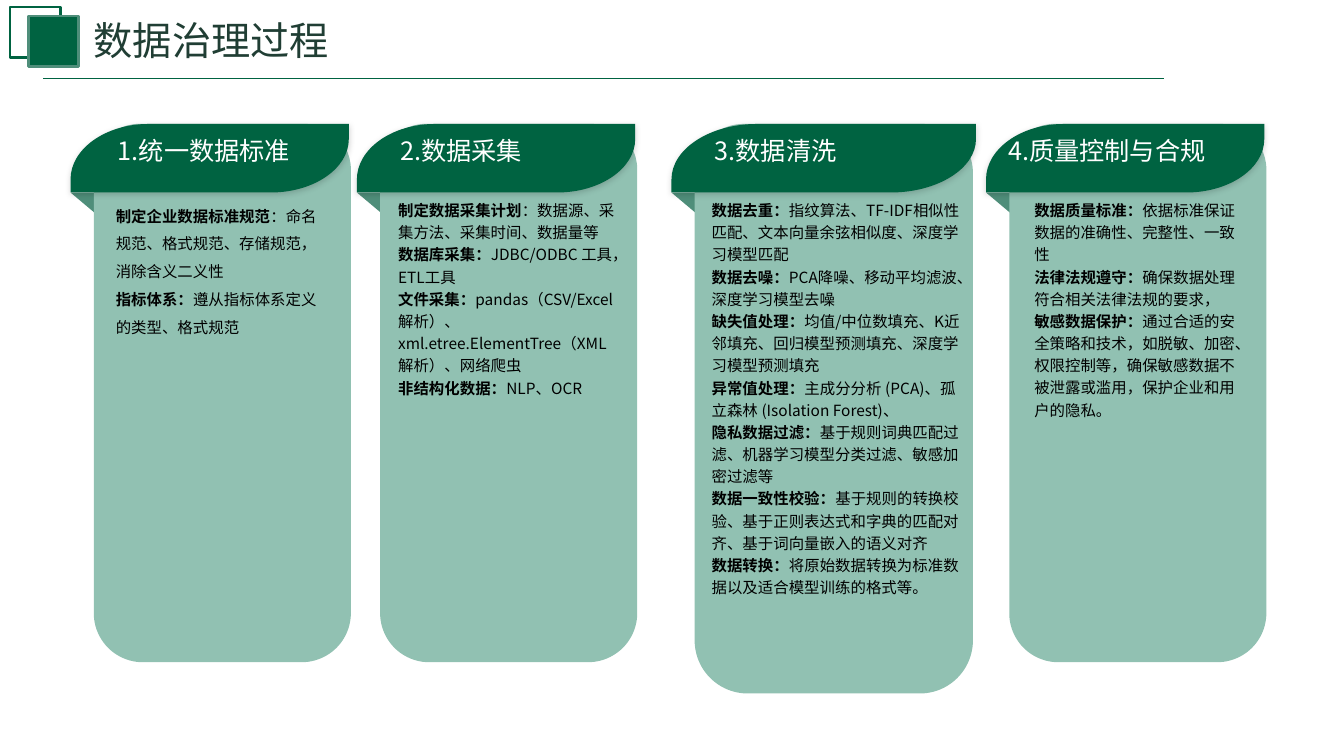
import copy
from lxml import etree
from pptx import Presentation
from pptx import util as u
from pptx.dml.color import RGBColor
from pptx.enum import shapes, text
from pptx.oxml import ns

GREEN = RGBColor(0x00, 0x63, 0x41)
MID_GREEN = RGBColor(0x4F, 0x8E, 0x7A)
PALE_GREEN = RGBColor(0x91, 0xC1, 0xB2)
DARK_START = RGBColor(0x16, 0x2B, 0x25)
DARK_MIDDLE = RGBColor(0x20, 0x3E, 0x34)
DARK_END = RGBColor(0x26, 0x49, 0x3E)
WHITE = RGBColor(0xFF, 0xFF, 0xFF)
BLACK = RGBColor(0x00, 0x00, 0x00)
FONT = "Noto Sans CJK SC"
TOP, FOLD = 1.23, 1.91

COLUMNS = [
    dict(x=0.7, w=2.76, panel=(2.55, 5.34), head="1.统一数据标准", head_x=1.07,
         body=(1.05, 2.33, 1.46), spacing=1.5, items=[
             ("制定企业数据标准规范", "：命名规范、格式规范、存储规范，消除含义二义性"),
             ("指标体系：", "遵从指标体系定义的类型、格式规范")]),
    dict(x=3.54, w=2.76, panel=(2.55, 5.34), head="2.数据采集", head_x=3.87,
         body=(3.85, 2.41, 2.08), spacing=1.2, items=[
             ("制定数据采集计划", "：数据源、采集方法、采集时间、数据量等"),
             ("数据库采集：", "JDBC/ODBC 工具，ETL工具"),
             ("文件采集：", "pandas（CSV/Excel解析）、xml.etree.ElementTree（XML解析）、网络爬虫"),
             ("非结构化数据：", "NLP、OCR")]),
    dict(x=6.66, w=3.02, panel=(2.76, 5.65), head="3.数据清洗", head_x=6.99,
         body=(6.96, 2.69, 4.81), spacing=1.2, items=[
             ("数据去重：", "指纹算法、TF-IDF相似性匹配、文本向量余弦相似度、深度学习模型匹配"),
             ("数据去噪：", "PCA降噪、移动平均滤波、深度学习模型去噪"),
             ("缺失值处理：", "均值/中位数填充、K近邻填充、回归模型预测填充、深度学习模型预测填充"),
             ("异常值处理：", "主成分分析 (PCA)、孤立森林 (Isolation Forest)、"),
             ("隐私数据过滤：", "基于规则词典匹配过滤、机器学习模型分类过滤、敏感加密过滤等"),
             ("数据一致性校验：", "基于规则的转换校验、基于正则表达式和字典的匹配对齐、基于词向量嵌入的语义对齐"),
             ("数据转换：", "将原始数据转换为标准数据以及适合模型训练的格式等。")]),
    dict(x=9.78, w=2.76, panel=(2.55, 5.34), head="4.质量控制与合规", head_x=9.9,
         body=(10.16, 2.24, 2.3), spacing=1.2, items=[
             ("数据质量标准：", "依据标准保证数据的准确性、完整性、一致性"),
             ("法律法规遵守：", "确保数据处理符合相关法律法规的要求，"),
             ("敏感数据保护：", "通过合适的安全策略和技术，如脱敏、加密、权限控制等，确保敏感数据不被泄露或滥用，保护企业和用户的隐私。")]),
]

prs = Presentation()
prs.slide_width, prs.slide_height = u.Inches(13.33), u.Inches(7.5)
s = prs.slides.add_slide(prs.slide_layouts[5])


def add_outline(points, color):
    pts = [(u.Inches(px), u.Inches(py)) for px, py in points]
    fb = s.shapes.build_freeform(*pts[0])
    fb.add_line_segments(pts[1:], close=True)
    sp = fb.convert_to_shape()
    sp.shadow.inherit = False
    sp.fill.solid()
    sp.fill.fore_color.rgb = color
    sp.line.fill.background()
    return sp


def add_text(box, paragraphs, size, color, spacing):
    tf = s.shapes.add_textbox(*map(u.Inches, box)).text_frame
    tf.word_wrap = True
    for i, runs in enumerate(paragraphs):
        p = tf.paragraphs[0] if i == 0 else tf.add_paragraph()
        p.line_spacing = spacing
        for words, bold in runs:
            r = p.add_run()
            r.text = words
            for name, value in dict(size=u.Pt(size), name=FONT, bold=bold).items():
                setattr(r.font, name, value)
            r.font.color.rgb = color
            etree.SubElement(r.font._element, ns.qn("a:ea"), typeface=FONT)


title = s.shapes.title
for name, value in dict(left=0.83, top=0.11, width=6.09, height=0.57).items():
    setattr(title, name, u.Inches(value))
tf = title.text_frame
for name, value in dict(text="数据治理过程", auto_size=text.MSO_AUTO_SIZE.NONE,
                        vertical_anchor=text.MSO_ANCHOR.MIDDLE).items():
    setattr(tf, name, value)
p = tf.paragraphs[0]
p.alignment = text.PP_ALIGN.LEFT
font = p.runs[0].font
font.name, font.size = "Arial", u.Pt(28)
font.fill.gradient()
font.fill.gradient_angle = 0
first_stop = next(font._element.iter(ns.qn("a:gs")))
first_stop.addnext(copy.deepcopy(first_stop))
for stop, position, color in zip(font.fill.gradient_stops, (0, 0.5, 1),
                                 (DARK_START, DARK_MIDDLE, DARK_END)):
    stop.position = position
    stop.color.rgb = color

for col in COLUMNS:
    x, w = col["x"], col["w"]
    right, rx = x + w, 0.28 * w
    add_outline([(x, FOLD), (x + 0.57, FOLD + 0.48), (x + 0.57, FOLD)], MID_GREEN)

    panel = s.shapes.add_shape(shapes.MSO_SHAPE.ROUND_2_SAME_RECTANGLE,
                               *map(u.Inches, (x + 0.23, TOP, *col["panel"])))
    panel.adjustments[0], panel.adjustments[1] = 0.176, 0.191
    panel.shadow.inherit = False
    panel.fill.solid()
    panel.fill.fore_color.rgb = PALE_GREEN
    panel.line.fill.background()

    banner = add_outline([(x + rx, TOP), (right, TOP), (right, 1.38), (right - rx, FOLD),
                          (x, FOLD), (x, 1.78), (x + rx, TOP)], GREEN)
    edges = list(banner._element.iter(ns.qn("a:lnTo")))
    for before, curve in ((edges[1], edges[2]), (edges[4], edges[5])):
        (x0, y0), (x1, y1) = [(int(e[0].get("x")), int(e[0].get("y"))) for e in (before, curve)]
        curve.tag = ns.qn("a:cubicBezTo")
        controls = [(x0, y0 + 0.55 * (y1 - y0)), (x1 + 0.55 * (x0 - x1), y1)]
        for i, (cx, cy) in enumerate(controls):
            curve.insert(i, etree.Element(ns.qn("a:pt"), x=str(round(cx)), y=str(round(cy))))

    effects = banner._element.spPr.find(ns.qn("a:effectLst"))
    shadow = etree.SubElement(effects, ns.qn("a:outerShdw"), blurRad=str(u.Pt(4.5)),
                              dist=str(u.Pt(1.5)), dir="5400000", rotWithShape="0")
    shade = etree.SubElement(shadow, ns.qn("a:srgbClr"), val=str(BLACK))
    etree.SubElement(shade, ns.qn("a:alpha"), val="17000")

    left, width, height = col["body"]
    add_text((left, FOLD, width, height),
             [[(term, True), (detail, False)] for term, detail in col["items"]],
             11, BLACK, col["spacing"])
    add_text((col["head_x"], 1.29, 2.75, 0.4), [[(col["head"], False)]], 18, WHITE, 1.0)

rule = s.shapes.add_connector(shapes.MSO_CONNECTOR.STRAIGHT,
                              *map(u.Inches, (0.43, 0.78, 11.54, 0.78)))
rule.line.color.rgb = GREEN
rule.line.width = u.Pt(1.25)
etree.SubElement(rule._element.spPr, ns.qn("a:effectLst"))

for x, y, fill, line in [(0.1, 0.07, None, GREEN), (0.28, 0.16, GREEN, MID_GREEN)]:
    sp = s.shapes.add_shape(shapes.MSO_SHAPE.RECTANGLE, *map(u.Inches, (x, y, 0.5, 0.5)))
    sp.shadow.inherit = False
    if fill is None:
        sp.fill.background()
    else:
        sp.fill.solid()
        sp.fill.fore_color.rgb = fill
    sp.line.color.rgb = line
    sp.line.width = u.Pt(2)

prs.save("out.pptx")
